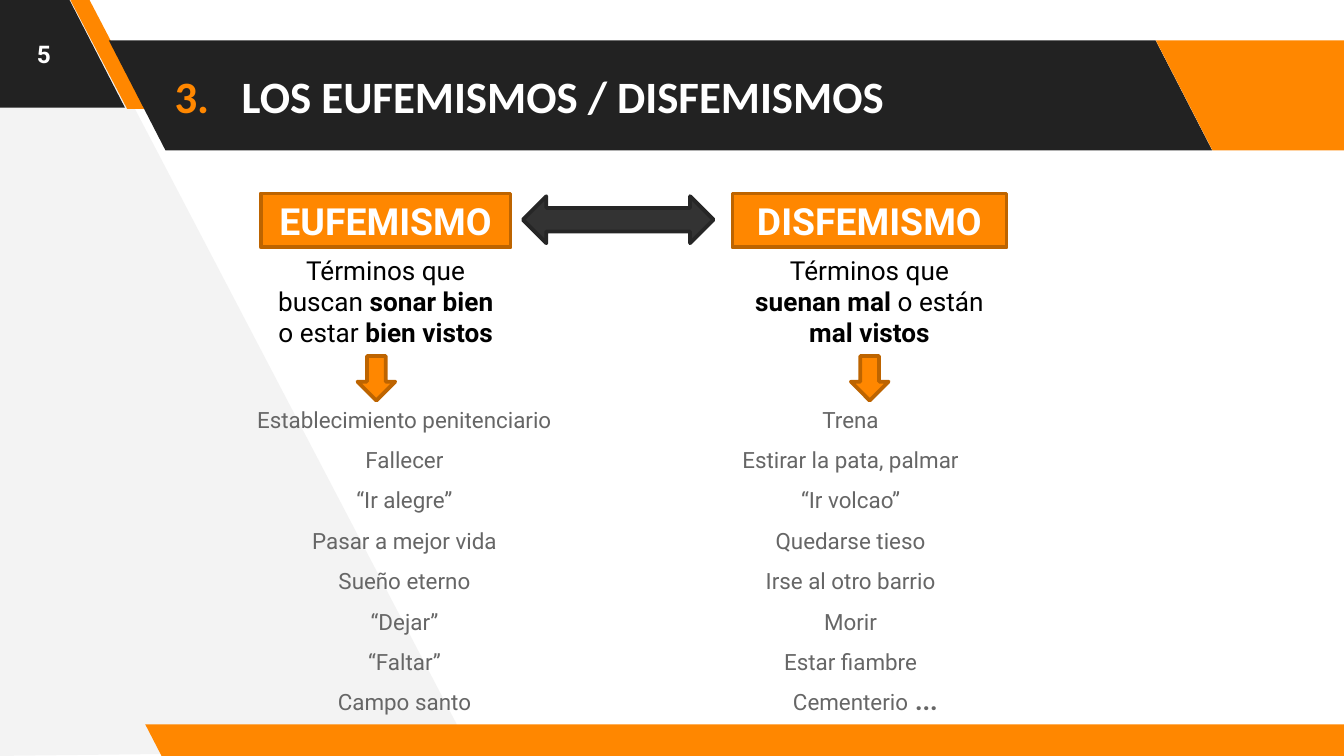
from lxml.etree import SubElement
from pptx import Presentation
from pptx.dml.color import RGBColor
from pptx.enum.shapes import MSO_SHAPE as Preset
from pptx.enum.text import MSO_ANCHOR as Anchor, PP_ALIGN as Align
from pptx.oxml.ns import qn
from pptx.util import Pt

ORANGE = RGBColor(0xFF, 0x87, 0x00)
DARK_ORANGE = RGBColor(0xBD, 0x64, 0x00)
BLACK = RGBColor(0x00, 0x00, 0x00)
INK = RGBColor(0x22, 0x22, 0x22)
CHARCOAL = RGBColor(0x33, 0x33, 0x33)
CHARCOAL_EDGE = RGBColor(0x26, 0x26, 0x26)
GREY = RGBColor(0x66, 0x66, 0x66)
PALE = RGBColor(0xF3, 0xF3, 0xF3)
WHITE = RGBColor(0xFF, 0xFF, 0xFF)

NO_GRID_STYLE = "{2D5ABB26-0587-4C30-8999-92F81FD0307C}"
ROW_HEIGHT = 21.6

BANDS = [
    (-71.3, -1.4, 138.2, 59, 0.515, INK),
    (37.4, -0.7, 41, 59, 0.75, ORANGE),
    (58.3, 21.6, 591.1, 59, 0.515, INK),
    (619.2, 21.6, 138.2, 59, 0.515, ORANGE),
    (77.8, 388, 658.8, 18, 0.515, ORANGE),
]
CONCEPTS = [
    ("EUFEMISMO", 139.7, 133.9, 191.5,
     [("Términos que buscan ", False), ("sonar bien", True),
      (" o estar ", False), ("bien vistos", True)]),
    ("DISFEMISMO", 392.4, 146.9, 455.8,
     [("Términos que ", False), ("suenan mal", True),
      (" o están ", False), ("mal vistos", True)]),
]
EXAMPLES = [
    ("Establecimiento penitenciario", "Trena"),
    ("Fallecer", "Estirar la pata, palmar"),
    ("“Ir alegre”", "“Ir volcao”"),
    ("Pasar a mejor vida", "Quedarse tieso"),
    ("Sueño eterno", "Irse al otro barrio"),
    ("“Dejar”", "Morir"),
    ("“Faltar”", "Estar fiambre"),
    ("Campo santo", "Cementerio"),
]


def write_runs(frame, runs, size, color, font="Roboto", align=Align.CENTER):
    """Write (text, bold) runs into the first paragraph and return it."""
    paragraph = frame.paragraphs[0]
    paragraph.alignment = align
    for text, bold in runs:
        run = paragraph.add_run()
        run.text = text
        run.font.name = font
        run.font.size = Pt(size)
        run.font.bold = bold
        run.font.color.rgb = color
    return paragraph


def add_preset(slide, preset, left, top, width, height, fill, edge=None):
    """Add a flat preset shape, outlined only when an edge colour is given."""
    shape = slide.shapes.add_shape(preset, Pt(left), Pt(top), Pt(width), Pt(height))
    shape.shadow.inherit = False
    shape.fill.solid()
    shape.fill.fore_color.rgb = fill
    if edge is None:
        shape.line.fill.background()
    else:
        shape.line.color.rgb = edge
        shape.line.width = Pt(2)
    return shape


def add_band(slide, left, top, width, height, slant, fill):
    """Add a mirrored parallelogram."""
    band = add_preset(slide, Preset.PARALLELOGRAM, left, top, width, height, fill)
    band.adjustments[0] = slant
    band.element.spPr.find(qn("a:xfrm")).set("flipH", "1")


def add_backdrop(slide):
    """Add the pale slanted area on the left."""
    builder = slide.shapes.build_freeform(Pt(252), Pt(402), scale=1.0)
    corners = [(40.3, -2.9), (-4.3, -2.9), (-1.4, 405)]
    builder.add_line_segments([(Pt(x), Pt(y)) for x, y in corners], close=True)
    backdrop = builder.convert_to_shape()
    backdrop.shadow.inherit = False
    backdrop.fill.solid()
    backdrop.fill.fore_color.rgb = PALE
    backdrop.line.fill.background()


def add_text(slide, left, top, width, height, anchor=Anchor.TOP, inset=3.6, wrap=True):
    """Add an empty text box and return its frame."""
    frame = slide.shapes.add_textbox(Pt(left), Pt(top), Pt(width), Pt(height)).text_frame
    frame.word_wrap = wrap
    frame.vertical_anchor = anchor
    frame.margin_top = frame.margin_bottom = Pt(inset)
    return frame


def number_paragraph(paragraph, start, color, indent):
    """Give a paragraph a coloured automatic number with a hanging indent."""
    properties = paragraph._p.get_or_add_pPr()
    properties.set("marL", str(Pt(indent)))
    properties.set("indent", str(-Pt(indent)))
    bullet_color = SubElement(properties, qn("a:buClr"))
    SubElement(bullet_color, qn("a:srgbClr"), val=str(color))
    SubElement(properties, qn("a:buAutoNum"), type="arabicPeriod", startAt=str(start))


def add_concept(slide, name, left, width, arrow_left, definition):
    """Add a heading box, its definition and the arrow to the examples."""
    heading = add_preset(slide, Preset.RECTANGLE, left, 103.7, width, 28.8,
                         ORANGE, DARK_ORANGE)
    heading.text_frame.vertical_anchor = Anchor.MIDDLE
    write_runs(heading.text_frame, [(name, True)], 20, WHITE)
    write_runs(add_text(slide, left, 132.5, width, 58.3), definition, 14, BLACK)
    add_preset(slide, Preset.DOWN_ARROW, arrow_left, 190.8, 20.2, 23.8,
               ORANGE, DARK_ORANGE)


def add_examples(slide):
    """Add the two-column table of examples."""
    widths = (246.2, 231.8)
    table = slide.shapes.add_table(
        len(EXAMPLES), len(widths), Pt(93.6), Pt(214.6),
        Pt(sum(widths)), Pt(ROW_HEIGHT * len(EXAMPLES))).table
    table.first_row = table.horz_banding = False
    table._tbl.tblPr.find(qn("a:tableStyleId")).text = NO_GRID_STYLE
    for column, width in zip(table.columns, widths):
        column.width = Pt(width)
    for row, examples in zip(table.rows, EXAMPLES):
        row.height = Pt(ROW_HEIGHT)
        for cell, example in zip(row.cells, examples):
            cell.fill.background()
            write_runs(cell.text_frame, [(example, False)], 12, GREY)


def main():
    """Build and save the slide."""
    deck = Presentation()
    deck.slide_width, deck.slide_height = Pt(720), Pt(405)
    slide = deck.slides.add_slide(deck.slide_layouts[6])

    add_backdrop(slide)
    for band in BANDS:
        add_band(slide, *band)

    title = add_text(slide, 86.4, 21.6, 596.2, 59, Anchor.MIDDLE, 7.2)
    heading = write_runs(title, [("LOS EUFEMISMOS / DISFEMISMOS", True)], 24, WHITE,
                         "Calibri", Align.LEFT)
    number_paragraph(heading, 3, ORANGE, 36)
    page_number = add_text(slide, 0, 0, 46.8, 57.6, Anchor.MIDDLE, 7.2)
    write_runs(page_number, [("5", True)], 13, WHITE)

    for concept in CONCEPTS:
        add_concept(slide, *concept)
    add_preset(slide, Preset.LEFT_RIGHT_ARROW, 280.1, 105.1, 102.2, 25.2,
               CHARCOAL, CHARCOAL_EDGE)

    add_examples(slide)
    ellipsis = add_text(slide, 483.1, 362.9, 27.4, 24.5, wrap=False)
    write_runs(ellipsis, [("...", True)], 14, GREY, align=Align.LEFT)

    deck.save("out.pptx")


if __name__ == "__main__":
    main()
